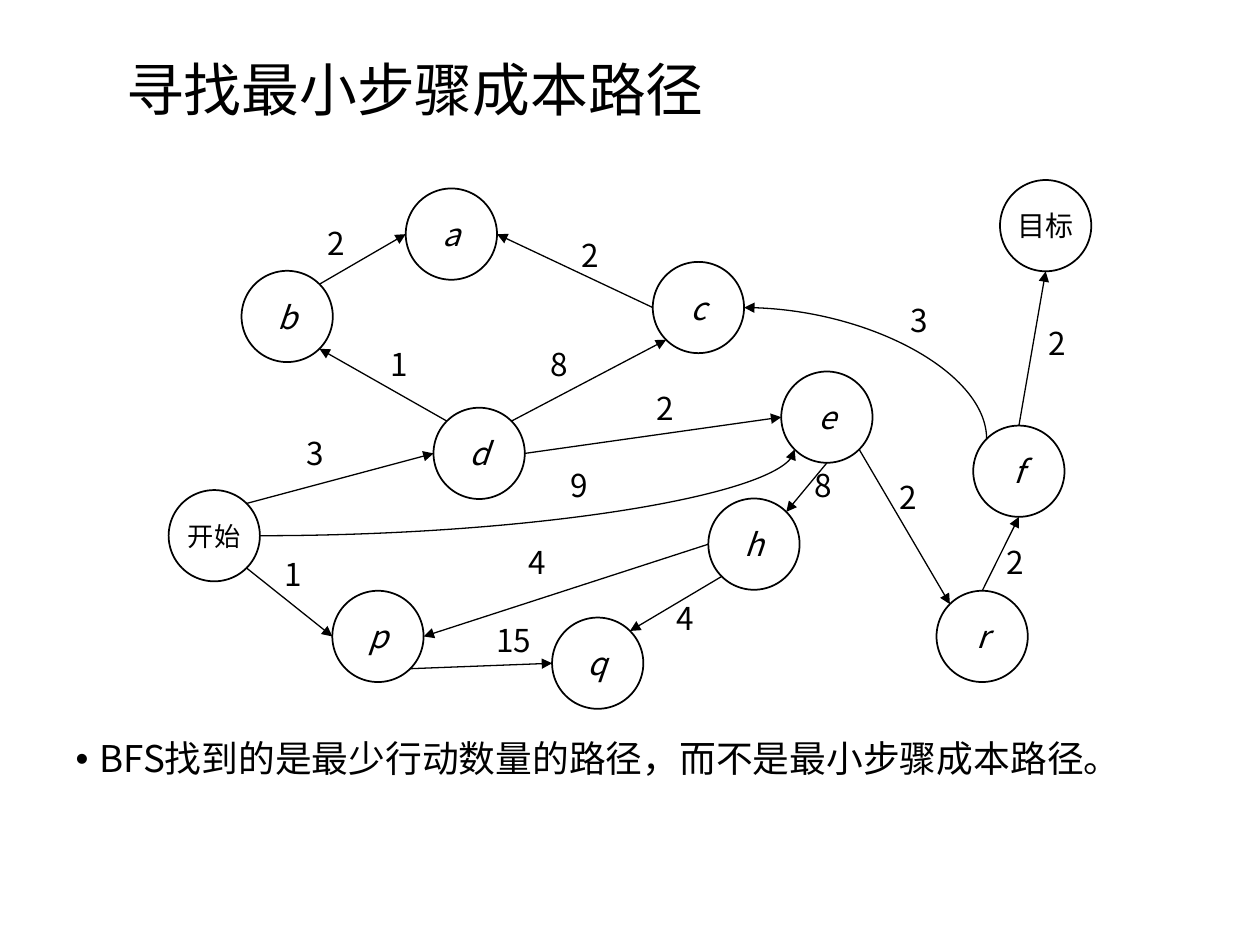
import math
from dataclasses import dataclass

import pptx
import pptx.dml.color
import pptx.enum.shapes
import pptx.enum.text
import pptx.oxml.ns
import pptx.util
from pptx.util import Cm

FONT = "Noto Sans CJK SC"
BLACK = "000000"
DIAMETER = 1.84
ALIGN = pptx.enum.text.PP_ALIGN
ANCHOR = pptx.enum.text.MSO_ANCHOR
# Compass points on a node, as angles clockwise from east
ANGLES = {"e": 0, "se": 45, "s": 90, "sw": 135,
          "w": 180, "nw": 225, "n": 270, "ne": 315}


@dataclass
class Node:
    """A state of the search graph; x and y are its centre in cm."""
    name: str
    x: float
    y: float
    size: int = 18
    italic: bool = True

    def site(self, compass: str) -> tuple[float, float]:
        angle = math.radians(ANGLES[compass])
        return (self.x + DIAMETER / 2 * math.cos(angle),
                self.y + DIAMETER / 2 * math.sin(angle))


@dataclass
class Edge:
    """A weighted step; x and y are the top left of its cost label in cm."""
    start: str
    start_site: str
    end: str
    end_site: str
    cost: int
    x: float
    y: float
    curved: bool = False
    arrow: str = "tailEnd"


NODES = [
    Node("开始", 4.32, 10.8, 15, False),
    Node("目标", 21.08, 4.55, 16, False),
    Node("d", 9.66, 9.14),
    Node("b", 5.79, 6.38),
    Node("p", 7.62, 12.83),
    Node("q", 12.05, 13.37),
    Node("c", 14.08, 6.2),
    Node("e", 16.67, 8.41),
    Node("h", 15.2, 10.97),
    Node("a", 9.1, 4.72),
    Node("f", 20.54, 9.5),
    Node("r", 19.8, 12.83),
]
EDGES = [
    Edge("开始", "se", "p", "w", 1, 5.54, 11.18),
    Edge("p", "se", "q", "w", 15, 9.8, 12.52),
    Edge("h", "sw", "q", "ne", 4, 13.44, 12.07),
    Edge("h", "w", "p", "e", 4, 10.46, 10.95),
    Edge("e", "s", "h", "ne", 8, 16.23, 9.4),
    Edge("e", "se", "r", "nw", 2, 17.93, 9.63),
    Edge("r", "n", "f", "s", 2, 20.09, 10.95),
    Edge("f", "n", "目标", "s", 2, 20.93, 6.53),
    Edge("开始", "ne", "d", "w", 3, 5.97, 8.74),
    Edge("d", "nw", "b", "se", 1, 7.67, 6.96),
    Edge("b", "ne", "a", "w", 2, 6.4, 4.52),
    Edge("c", "w", "a", "e", 2, 11.53, 4.75),
    Edge("d", "ne", "c", "sw", 8, 10.9, 6.96),
    Edge("d", "e", "e", "w", 2, 13.03, 7.85),
    # A curve leaves horizontally, so f to c runs backwards with its arrow at c
    Edge("c", "e", "f", "nw", 3, 18.16, 6.07, True, "headEnd"),
    Edge("开始", "e", "e", "sw", 9, 11.3, 9.4, True),
]


def color(value: str) -> pptx.dml.color.RGBColor:
    return pptx.dml.color.RGBColor.from_string(value)


def write(tf, text: str, *, size: float, align=ALIGN.LEFT, anchor=ANCHOR.TOP,
          italic: bool = False, wrap: bool = True, spacing: float = 1.0):
    """Put one formatted paragraph in a text frame and return it."""
    tf.auto_size = pptx.enum.text.MSO_AUTO_SIZE.NONE
    tf.word_wrap = wrap
    tf.vertical_anchor = anchor
    p = tf.paragraphs[0]
    p.alignment = align
    p.line_spacing = spacing
    r = p.add_run()
    r.text = text
    r.font.name = FONT
    r.font.size = pptx.util.Pt(size)
    r.font.italic = italic
    r.font.color.rgb = color(BLACK)
    ea = r.font._element.makeelement(pptx.oxml.ns.qn("a:ea"), {"typeface": FONT})
    r.font._element.find(pptx.oxml.ns.qn("a:latin")).addnext(ea)
    return p


def place(sp, left: float, top: float, width: float, height: float) -> None:
    sp.left, sp.top, sp.width, sp.height = map(Cm, (left, top, width, height))


def draw_node(slide, node: Node) -> None:
    sp = slide.shapes.add_shape(
        pptx.enum.shapes.MSO_SHAPE.FLOWCHART_CONNECTOR,
        Cm(node.x - DIAMETER / 2), Cm(node.y - DIAMETER / 2),
        Cm(DIAMETER), Cm(DIAMETER))
    sp.shadow.inherit = False
    sp.fill.background()
    sp.line.color.rgb = color(BLACK)
    sp.line.width = pptx.util.Pt(1)
    write(sp.text_frame, node.name, size=node.size, italic=node.italic,
          align=ALIGN.CENTER, anchor=ANCHOR.MIDDLE, wrap=False)


def draw_edge(slide, edge: Edge, nodes: dict[str, Node]) -> None:
    kinds = pptx.enum.shapes.MSO_CONNECTOR
    begin = nodes[edge.start].site(edge.start_site)
    end = nodes[edge.end].site(edge.end_site)
    cxn = slide.shapes.add_connector(
        kinds.CURVE if edge.curved else kinds.STRAIGHT, *map(Cm, begin + end))
    cxn.line.color.rgb = color(BLACK)
    cxn.line.width = pptx.util.Pt(0.75)
    sp_pr = cxn._element.spPr
    if edge.curved:
        sp_pr.find(pptx.oxml.ns.qn("a:prstGeom")).set("prst", "curvedConnector2")
    ln = cxn.line._get_or_add_ln()
    ln.append(ln.makeelement(pptx.oxml.ns.qn(f"a:{edge.arrow}"),
                             {"type": "triangle"}))
    sp_pr.append(sp_pr.makeelement(pptx.oxml.ns.qn("a:effectLst"), {}))


def draw_cost(slide, edge: Edge) -> None:
    text = str(edge.cost)
    width = 0.43 + 0.43 * len(text)
    sp = slide.shapes.add_textbox(Cm(edge.x), Cm(edge.y), Cm(width), Cm(1.02))
    tf = sp.text_frame
    tf.margin_left = tf.margin_right = Cm(0.2)
    tf.margin_top = tf.margin_bottom = 0
    write(tf, text, size=18)


def main() -> None:
    prs = pptx.Presentation()
    prs.slide_width, prs.slide_height = Cm(25.4), Cm(19.05)
    slide = prs.slides.add_slide(prs.slide_layouts[1])

    # Title and conclusion
    title, body = slide.placeholders
    place(title, 2.29, 0.79, 20.96, 2.18)
    write(title.text_frame, "寻找最小步骤成本路径", size=33,
          anchor=ANCHOR.MIDDLE, spacing=0.9)
    place(body, 1.27, 14.81, 22.86, 3.18)
    p = write(body.text_frame, "BFS找到的是最少行动数量的路径，而不是最小步骤成本路径。",
              size=21, spacing=0.9)
    p.space_before = pptx.util.Pt(7.5)
    p_pr = p._p.get_or_add_pPr()
    p_pr.set("marL", str(Cm(0.48)))
    p_pr.set("indent", str(Cm(-0.48)))

    # Search graph
    nodes = {node.name: node for node in NODES}
    for node in NODES:
        draw_node(slide, node)
    for edge in EDGES:
        draw_edge(slide, edge, nodes)
    for edge in EDGES:
        draw_cost(slide, edge)

    prs.save("out.pptx")


if __name__ == "__main__":
    main()
